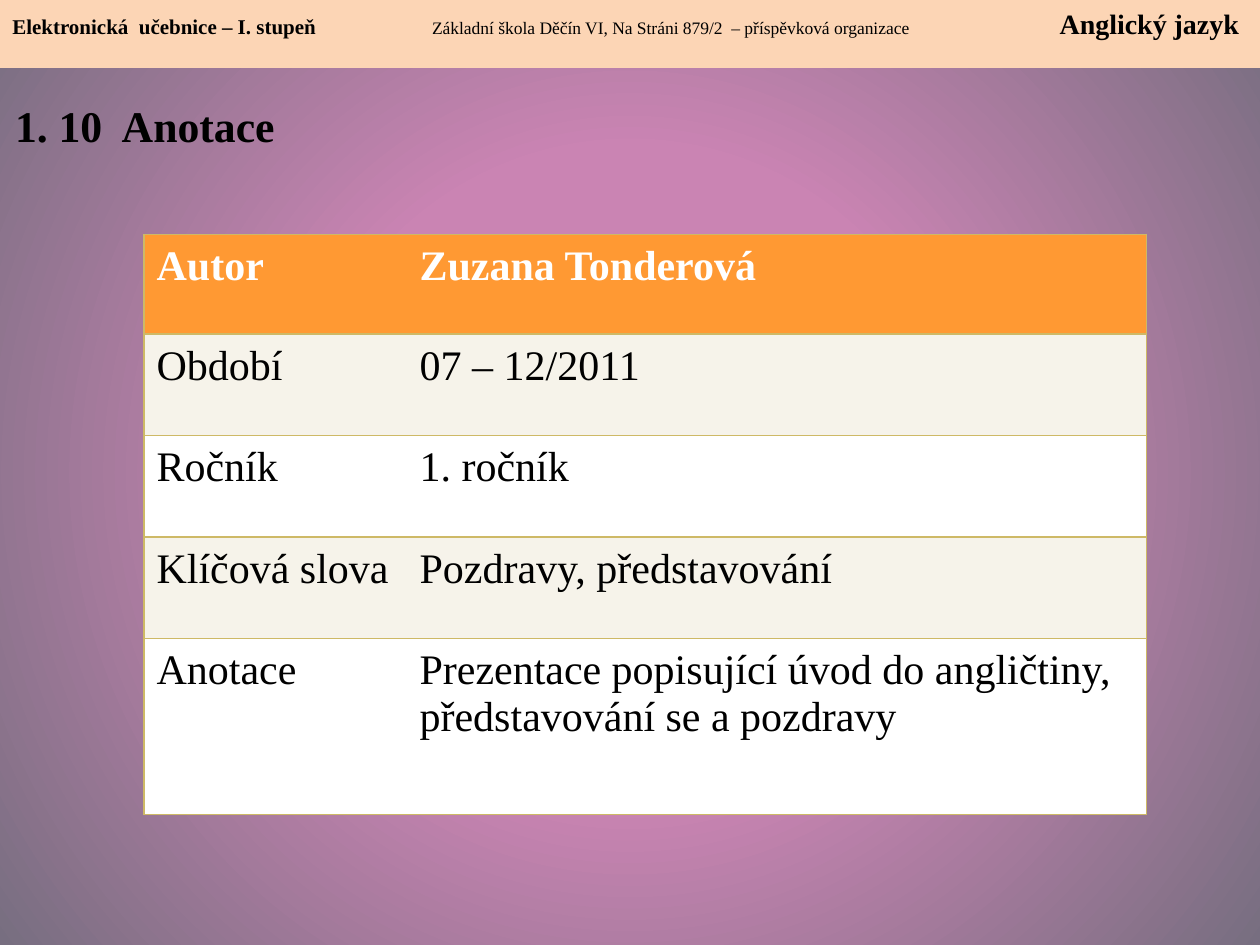
"""Build the annotation slide of an English textbook."""
from typing import NamedTuple

from lxml.etree import SubElement
from pptx import Presentation
from pptx.dml.color import RGBColor
from pptx.enum.shapes import MSO_SHAPE
from pptx.enum.text import MSO_ANCHOR, MSO_AUTO_SIZE, PP_ALIGN
from pptx.oxml.ns import qn
from pptx.util import Pt

FONT = "Times New Roman"
BLACK, WHITE, CREAM = "000000", "FFFFFF", "F6F3EA"
GOLD, AMBER, PEACH = "CEB966", "FF9933", "FCD5B5"
PLAIN = "{2D5ABB26-0587-4C30-8999-92F81FD0307C}"


class Part(NamedTuple):
    text: str
    size: float
    bold: bool


class Row(NamedTuple):
    label: str
    value: str
    high: float
    fill: str
    ink: str = BLACK
    bold: bool = False


PARTS = [
    Part("Elektronická  učebnice – I. stupeň", 12, True),
    Part("\tZákladní škola Děčín VI, Na Stráni 879/2  – příspěvková organizace", 10, False),
    Part("\tAnglický jazyk", 16, True),
]
TABS = [239.8, 598.5]
ROWS = [
    Row("Autor", "Zuzana Tonderová", 57, AMBER, WHITE, True),
    Row("Období", "07 – 12/2011", 58, CREAM),
    Row("Ročník", "1. ročník", 58, WHITE),
    Row("Klíčová slova", "Pozdravy, představování", 58, CREAM),
    Row("Anotace", "Prezentace popisující úvod do angličtiny, představování se a pozdravy",
        100.6, WHITE),
]
COLS = [150.3, 422.7]


def color(code: str) -> RGBColor:
    return RGBColor.from_string(code)


def style(font, size: float, bold: bool, ink: str = BLACK) -> None:
    font.name, font.size, font.bold = FONT, Pt(size), bold
    font.color.rgb = color(ink)


def paint_back(slide) -> None:
    fill = slide.background.fill
    fill.gradient()
    for stop, place, code in zip(fill.gradient_stops, (0.41, 1), ("CA84B3", "776E80")):
        stop.position = place
        stop.color.rgb = color(code)
    grad = slide.element.find(".//" + qn("a:gradFill"))
    grad.remove(grad.find(qn("a:lin")))
    ring = SubElement(grad, qn("a:path"), path="circle")
    SubElement(ring, qn("a:fillToRect"), dict.fromkeys("ltrb", "50000"))


def draw_bar(slide) -> None:
    bar = slide.shapes.add_shape(MSO_SHAPE.RECTANGLE, 0, 0, Pt(720), Pt(38.9))
    bar.shadow.inherit = False
    bar.fill.solid()
    bar.fill.fore_color.rgb = color(PEACH)
    bar.line.fill.background()
    frame = bar.text_frame
    frame.vertical_anchor = MSO_ANCHOR.TOP
    para = frame.paragraphs[0]
    para.alignment = PP_ALIGN.LEFT
    stops = SubElement(para._p.get_or_add_pPr(), qn("a:tabLst"))
    for tab in TABS:
        SubElement(stops, qn("a:tab"), pos=str(Pt(tab)), algn="l")
    for part in PARTS:
        run = para.add_run()
        run.text = part.text
        style(run.font, part.size, part.bold)


def draw_title(slide) -> None:
    title = slide.shapes.title
    title.left, title.top, title.width, title.height = map(Pt, (1.4, 52.6, 229.7, 62.6))
    frame = title.text_frame
    frame.text = "1. 10  Anotace"
    frame.auto_size = MSO_AUTO_SIZE.NONE
    frame.vertical_anchor = MSO_ANCHOR.TOP
    para = frame.paragraphs[0]
    para.alignment = PP_ALIGN.LEFT
    style(para.font, 25, True)


def fill_cell(cell, text: str, row: Row, sides: str) -> None:
    cell.text = text
    style(cell.text_frame.paragraphs[0].font, 24, row.bold, row.ink)
    cell.margin_left = cell.margin_right = Pt(7.2)
    cell.margin_top = cell.margin_bottom = Pt(5)
    props = cell._tc.get_or_add_tcPr()
    for side in sides:
        line = SubElement(props, qn("a:ln" + side), w=str(Pt(1)))
        solid = SubElement(line, qn("a:solidFill"))
        SubElement(solid, qn("a:srgbClr"), val=GOLD)
    cell.fill.solid()
    cell.fill.fore_color.rgb = color(row.fill)


def draw_table(slide) -> None:
    high = sum(row.high for row in ROWS)
    frame = slide.shapes.add_table(
        len(ROWS), len(COLS), Pt(82.3), Pt(134), Pt(sum(COLS)), Pt(high))
    table = frame.table
    table.first_row = table.horz_banding = False
    table._tbl.tblPr.find(qn("a:tableStyleId")).text = PLAIN
    for col, width in zip(table.columns, COLS):
        col.width = Pt(width)
    for line, row in zip(table.rows, ROWS):
        line.height = Pt(row.high)
        for cell, text, sides in zip(line.cells, (row.label, row.value), ("LTB", "RTB")):
            fill_cell(cell, text, row, sides)


def main() -> None:
    deck = Presentation()
    deck.slide_width, deck.slide_height = Pt(720), Pt(540)
    slide = deck.slides.add_slide(deck.slide_layouts[5])
    paint_back(slide)
    draw_bar(slide)
    draw_table(slide)
    draw_title(slide)
    deck.save("out.pptx")


if __name__ == "__main__":
    main()
